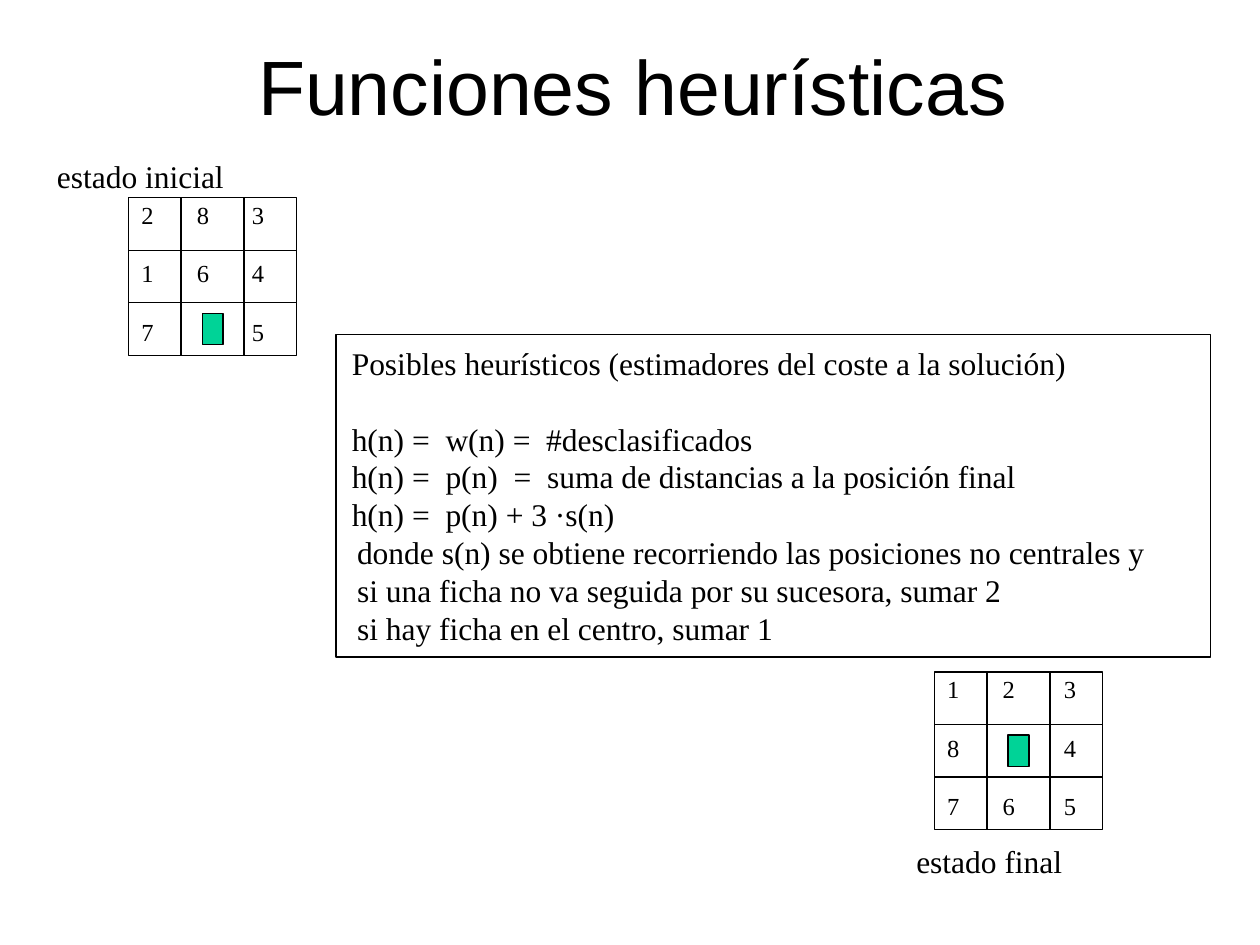
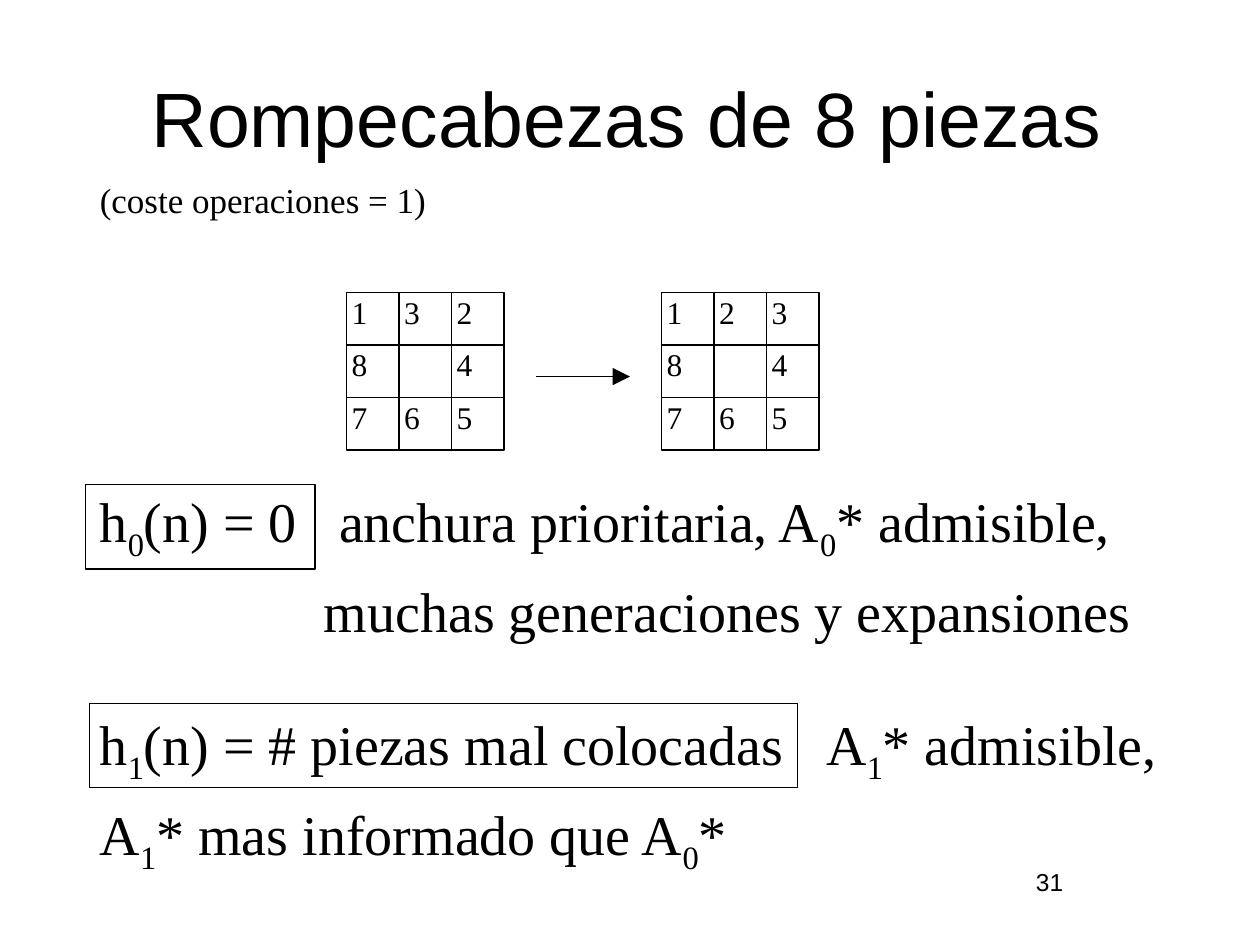
from dataclasses import dataclass
from typing import Any, Optional

import lxml.etree
import pptx
import pptx.dml.color
import pptx.enum.shapes
import pptx.enum.text
import pptx.oxml
import pptx.oxml.ns
import pptx.util

Pt = pptx.util.Pt
ALIGN = pptx.enum.text.PP_ALIGN
ANCHOR = pptx.enum.text.MSO_ANCHOR
BLACK = "000000"
GREEN = "00D397"
SERIF = "Times New Roman"
SANS = "Arial"
CELL_HEIGHT = 30
WIDE_SPACING = "1600"
SUBSCRIPT = "-25000"


@dataclass(frozen=True)
class Area:
    left: float
    top: float
    width: float
    height: float


@dataclass(frozen=True)
class Para:
    text: str
    before: float = 0
    indent: float = 0
    size: Optional[float] = None


@dataclass(frozen=True)
class Board:
    left: float
    top: float
    rows: tuple[str, str, str]
    columns: tuple[float, float] = (30, 60)
    width: float = 90
    digit_lefts: tuple[float, float, float] = (0, 30, 60)
    digit_top: float = 0
    digit_pitch: float = CELL_HEIGHT
    digit_size: float = 18
    marks_blank: bool = False

    @property
    def height(self) -> float:
        return CELL_HEIGHT * len(self.rows)


STATE = {"columns": (30, 66), "width": 96, "digit_top": 1, "digit_pitch": 33.6,
         "digit_size": 14, "marks_blank": True}
INITIAL_STATE = Board(73.5, 113, ("283", "164", "7 5"), digit_lefts=(4.3, 36, 67.5), **STATE)
FINAL_STATE = Board(534, 384, ("123", "8 4", "765"), digit_lefts=(4.3, 36, 71), **STATE)
PUZZLE_START = Board(198, 167.2, ("132", "8 4", "765"))
PUZZLE_GOAL = Board(378, 167.2, ("123", "8 4", "765"))

HEURISTICS = [
    Para("Posibles heurísticos (estimadores del coste a la solución)"),
    Para("h(n) =  w(n) =  #desclasificados", before=21.6),
    Para("h(n) =  p(n)  =  suma de distancias a la posición final"),
    Para("h(n) =  p(n) + 3 ·s(n)"),
    Para("donde s(n) se obtiene recorriendo las posiciones no centrales y", indent=3),
    Para("si una ficha no va seguida por su sucesora, sumar 2", indent=3),
    Para("si hay ficha en el centro, sumar 1", indent=3),
]

ESTIMATES = [
    Para("(coste operaciones = 1)", size=20),
    Para("h|0|(n) = 0| |anchura prioritaria, A|0|* admisible,", before=152),
    Para("muchas generaciones y expansiones", before=7.8, indent=128),
    Para("h|1|(n) = # piezas mal colocadas| |A|1|* admisible,", before=37.2),
    Para("A|1|* mas informado que A|0|*", before=7.8),
]


def color(value: str) -> pptx.dml.color.RGBColor:
    return pptx.dml.color.RGBColor.from_string(value)


def add_child(parent: Any, tag: str, **attributes: str) -> Any:
    child = lxml.etree.SubElement(parent, pptx.oxml.ns.qn(tag))
    for name, value in attributes.items():
        child.set(name, value)
    return child


def place(shape: Any, area: Area) -> None:
    shape.left, shape.top = Pt(area.left), Pt(area.top)
    shape.width, shape.height = Pt(area.width), Pt(area.height)


def write(
    box: Any,
    paras: list[Para],
    *,
    size: float,
    font: str = SERIF,
    align: Any = ALIGN.LEFT,
    anchor: Any = ANCHOR.TOP,
) -> None:
    frame = box.text_frame
    frame.word_wrap = True
    frame.auto_size = pptx.enum.text.MSO_AUTO_SIZE.NONE
    frame.vertical_anchor = anchor
    frame.margin_left = frame.margin_right = Pt(3)
    frame.margin_top = frame.margin_bottom = 0
    for index, para in enumerate(paras):
        line = frame.paragraphs[0] if index == 0 else frame.add_paragraph()
        line.alignment = align
        line.line_spacing = 1.0
        line.space_before = Pt(para.before)
        properties = line._p.get_or_add_pPr()
        properties.set("marL", str(Pt(para.indent)))
        properties.set("indent", "0")
        add_child(properties, "a:buNone")
        pieces = para.text.split("|")
        for piece in pieces:
            span = line.add_run()
            span.text = piece
            span.font.name = font
            span.font.size = Pt(para.size or size)
            span.font.color.rgb = color(BLACK)
            if piece == " ":
                span.font._element.set("spc", WIDE_SPACING)
            elif piece.isdigit() and len(pieces) > 1:
                span.font._element.set("baseline", SUBSCRIPT)


def add_text(page: Any, area: Area, paras: list[Para], **formatting: Any) -> None:
    box = page.shapes.add_textbox(0, 0, 0, 0)
    place(box, area)
    write(box, paras, **formatting)


def add_title(page: Any, text: str, area: Area) -> None:
    place(page.shapes.title, area)
    write(page.shapes.title, [Para(text)], size=44, font=SANS,
          align=ALIGN.CENTER, anchor=ANCHOR.MIDDLE)


def add_rectangle(page: Any, area: Area, fill: Optional[str] = None) -> None:
    shape = page.shapes.add_shape(pptx.enum.shapes.MSO_SHAPE.RECTANGLE, 0, 0, 0, 0)
    place(shape, area)
    shape.shadow.inherit = False
    shape.line.color.rgb = color(BLACK)
    shape.line.width = Pt(0.75)
    if fill:
        shape.fill.solid()
        shape.fill.fore_color.rgb = color(fill)
    else:
        shape.fill.background()


def add_line(page: Any, left: float, top: float, right: float, bottom: float,
             arrow: bool = False) -> None:
    line = page.shapes.add_connector(
        pptx.enum.shapes.MSO_CONNECTOR.STRAIGHT, Pt(left), Pt(top), Pt(right), Pt(bottom))
    line.line.color.rgb = color(BLACK)
    line.line.width = Pt(0.75)
    if arrow:
        add_child(line.line._get_or_add_ln(), "a:tailEnd", type="triangle", w="lg", len="lg")
    add_child(line._element.spPr, "a:effectLst")


def add_board(page: Any, board: Board) -> None:
    right, bottom = board.left + board.width, board.top + board.height
    add_rectangle(page, Area(board.left, board.top, board.width, board.height))
    for row in range(1, len(board.rows)):
        height = board.top + row * CELL_HEIGHT
        add_line(page, board.left, height, right, height)
    for column in board.columns:
        add_line(page, board.left + column, board.top, board.left + column, bottom)
    for row, digits in enumerate(board.rows):
        top = board.top + board.digit_top + row * board.digit_pitch
        for offset, digit in zip(board.digit_lefts, digits):
            if digit != " ":
                area = Area(board.left + offset, top, 16, board.digit_size * 1.2)
                add_text(page, area, [Para(digit)], size=board.digit_size)
            elif board.marks_blank:
                tile_top = board.top + row * CELL_HEIGHT + 6
                add_rectangle(page, Area(board.left + 42, tile_top, 12, 18), GREEN)


def build_heuristics(deck: Any) -> None:
    page = deck.slides.add_slide(deck.slide_layouts[5])
    add_title(page, "Funciones heurísticas", Area(55.7, 0, 612, 96.5))
    add_board(page, INITIAL_STATE)
    add_text(page, Area(29.5, 90, 104, 21.7), [Para("estado inicial")], size=18)
    add_board(page, FINAL_STATE)
    add_text(page, Area(520.6, 481, 92, 21.7), [Para("estado final")], size=18)
    add_text(page, Area(198, 196.6, 497.5, 174), HEURISTICS, size=18)
    add_rectangle(page, Area(192, 191.3, 499.7, 184.2))


def build_puzzle(deck: Any) -> None:
    page = deck.slides.add_slide(deck.slide_layouts[1])
    add_title(page, "Rompecabezas de 8 piezas", Area(34.3, 7.2, 648, 119))
    add_text(page, Area(587.5, 495.4, 24.5, 20), [Para("31")],
             size=14, font=SANS, align=ALIGN.CENTER)
    body = page.placeholders[1]
    place(body, Area(54, 102.2, 612, 391))
    write(body, ESTIMATES, size=32)
    add_board(page, PUZZLE_START)
    add_board(page, PUZZLE_GOAL)
    add_line(page, 306, 215.2, 360, 215.2, arrow=True)
    add_rectangle(page, Area(49, 277, 131, 48.2))
    add_rectangle(page, Area(51, 402, 404.8, 48.2))


def main() -> None:
    deck = pptx.Presentation()
    deck.slide_width, deck.slide_height = Pt(720), Pt(540)
    build_heuristics(deck)
    build_puzzle(deck)
    deck.save("out.pptx")


if __name__ == "__main__":
    main()
